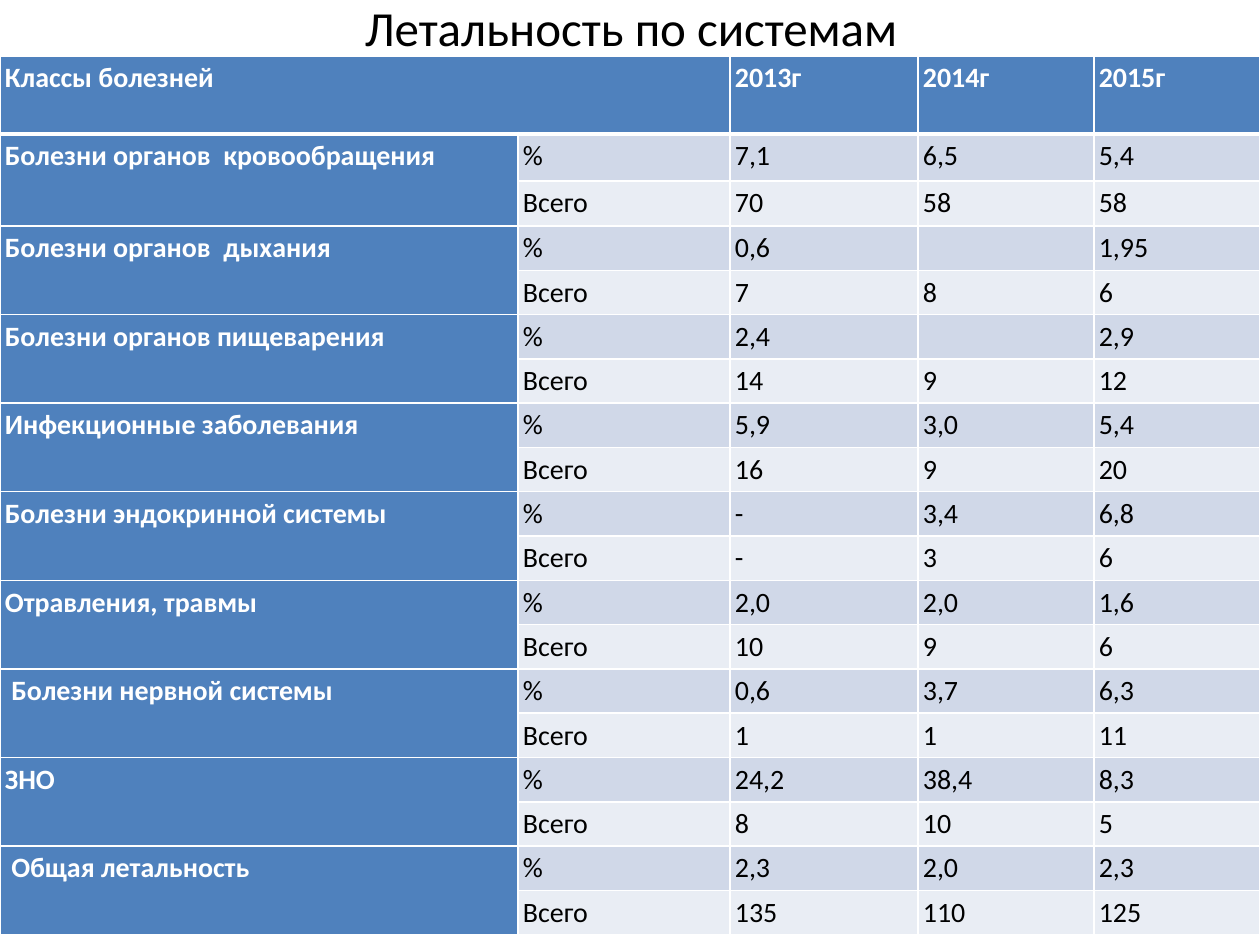
from dataclasses import dataclass

from pptx import Presentation
from pptx.dml.color import RGBColor
from pptx.enum.text import MSO_ANCHOR, PP_ALIGN
from pptx.oxml import parse_xml
from pptx.oxml.ns import nsdecls
from pptx.util import Pt

MIDDLE = MSO_ANCHOR.MIDDLE
CENTER, JUSTIFY = PP_ALIGN.CENTER, PP_ALIGN.JUSTIFY

TITLE = "Летальность по системам"
HEADINGS = ["Классы болезней", "", "2013г", "2014г", "2015г"]
MEASURES = ["%", "Всего"]
DISEASES = [
    ("Болезни органов  кровообращения", ["7,1", "6,5", "5,4"], ["70", "58", "58"]),
    ("Болезни органов  дыхания", ["0,6", "", "1,95"], ["7", "8", "6"]),
    ("Болезни органов пищеварения", ["2,4", "", "2,9"], ["14", "9", "12"]),
    ("Инфекционные заболевания", ["5,9", "3,0", "5,4"], ["16", "9", "20"]),
    ("Болезни эндокринной системы", ["-", "3,4", "6,8"], ["-", "3", "6"]),
    ("Отравления, травмы", ["2,0", "2,0", "1,6"], ["10", "9", "6"]),
    (" Болезни нервной системы", ["0,6", "3,7", "6,3"], ["1", "1", "11"]),
    ("ЗНО", ["24,2", "38,4", "8,3"], ["8", "10", "5"]),
    (" Общая летальность", ["2,3", "2,0", "2,3"], ["135", "110", "125"]),
]

PX = 914400 // 126
SLIDE_SIZE = (1260, 945)
TITLE_BOX = (64, 0, 1134, 54)
TABLE_BOX = (0, 56, 1260, 879)
COLUMN_WIDTHS = [518, 212, 188, 176, 166]
FIRST_ROW_HEIGHTS = [78, 47, 45]
CELL_INSET = 5


@dataclass(frozen=True)
class Theme:
    font: str = "Calibri"
    title_size: float = 28
    cell_size: float = 16
    line_spacing: float = 1.15
    text: str = "000000"
    white: str = "FFFFFF"
    heading_fill: str = "4F81BD"
    band_fills: tuple = ("D0D8E8", "E9EDF4")
    border: float = 1
    heading_border: float = 3


THEME = Theme()


def style_paragraph(paragraph, size, color, bold, alignment):
    paragraph.alignment = alignment
    font = paragraph.font
    font.name, font.size, font.bold = THEME.font, Pt(size), bold
    font.color.rgb = RGBColor.from_string(color)


def add_title(slide):
    shape = slide.shapes.add_textbox(*(value * PX for value in TITLE_BOX))
    frame = shape.text_frame
    frame.word_wrap = True
    frame.vertical_anchor = MIDDLE
    frame.margin_top = frame.margin_bottom = 0
    frame.text = TITLE
    style_paragraph(frame.paragraphs[0], THEME.title_size, THEME.text, False, CENTER)


def add_borders(cell, top, bottom):
    properties = cell._tc.get_or_add_tcPr()
    widths = {"L": THEME.border, "R": THEME.border, "T": top, "B": bottom}
    for side, width in widths.items():
        properties.append(parse_xml(
            f'<a:ln{side} {nsdecls("a")} w="{Pt(width)}"><a:solidFill>'
            f'<a:srgbClr val="{THEME.white}"/></a:solidFill></a:ln{side}>'
        ))


def fill_cell(cell, text, row, column):
    is_heading = row == 0 or column == 0
    add_borders(
        cell,
        THEME.heading_border if row == 1 else THEME.border,
        THEME.heading_border if row == 0 else THEME.border,
    )
    cell.fill.solid()
    fill = THEME.heading_fill if is_heading else THEME.band_fills[(row - 1) % 2]
    cell.fill.fore_color.rgb = RGBColor.from_string(fill)
    cell.margin_left = cell.margin_right = CELL_INSET * PX
    cell.margin_top = cell.margin_bottom = 0
    cell.text = text
    paragraph = cell.text_frame.paragraphs[0]
    paragraph.line_spacing = THEME.line_spacing
    color = THEME.white if is_heading else THEME.text
    style_paragraph(paragraph, THEME.cell_size, color, is_heading, JUSTIFY)


def add_mortality_table(slide):
    rows = [HEADINGS]
    for name, *values in DISEASES:
        for label, measure, figures in zip((name, ""), MEASURES, values):
            rows.append([label, measure, *figures])
    box = (value * PX for value in TABLE_BOX)
    table = slide.shapes.add_table(len(rows), len(HEADINGS), *box).table
    for column, width in zip(table.columns, COLUMN_WIDTHS):
        column.width = width * PX
    remaining = TABLE_BOX[3] - sum(FIRST_ROW_HEIGHTS)
    equal_count = len(rows) - len(FIRST_ROW_HEIGHTS)
    heights = FIRST_ROW_HEIGHTS + [remaining / equal_count] * equal_count
    for row, height in zip(table.rows, heights):
        row.height = int(height * PX)
    for row, texts in enumerate(rows):
        for column, text in enumerate(texts):
            fill_cell(table.cell(row, column), text, row, column)
    table.cell(0, 0).merge(table.cell(0, 1))
    for row in range(1, len(rows), len(MEASURES)):
        table.cell(row, 0).merge(table.cell(row + 1, 0))


def main():
    """Build the slide with the mortality table by disease class."""
    presentation = Presentation()
    presentation.slide_width, presentation.slide_height = (side * PX for side in SLIDE_SIZE)
    slide = presentation.slides.add_slide(presentation.slide_layouts[6])
    add_title(slide)
    add_mortality_table(slide)
    presentation.save("out.pptx")


if __name__ == "__main__":
    main()
